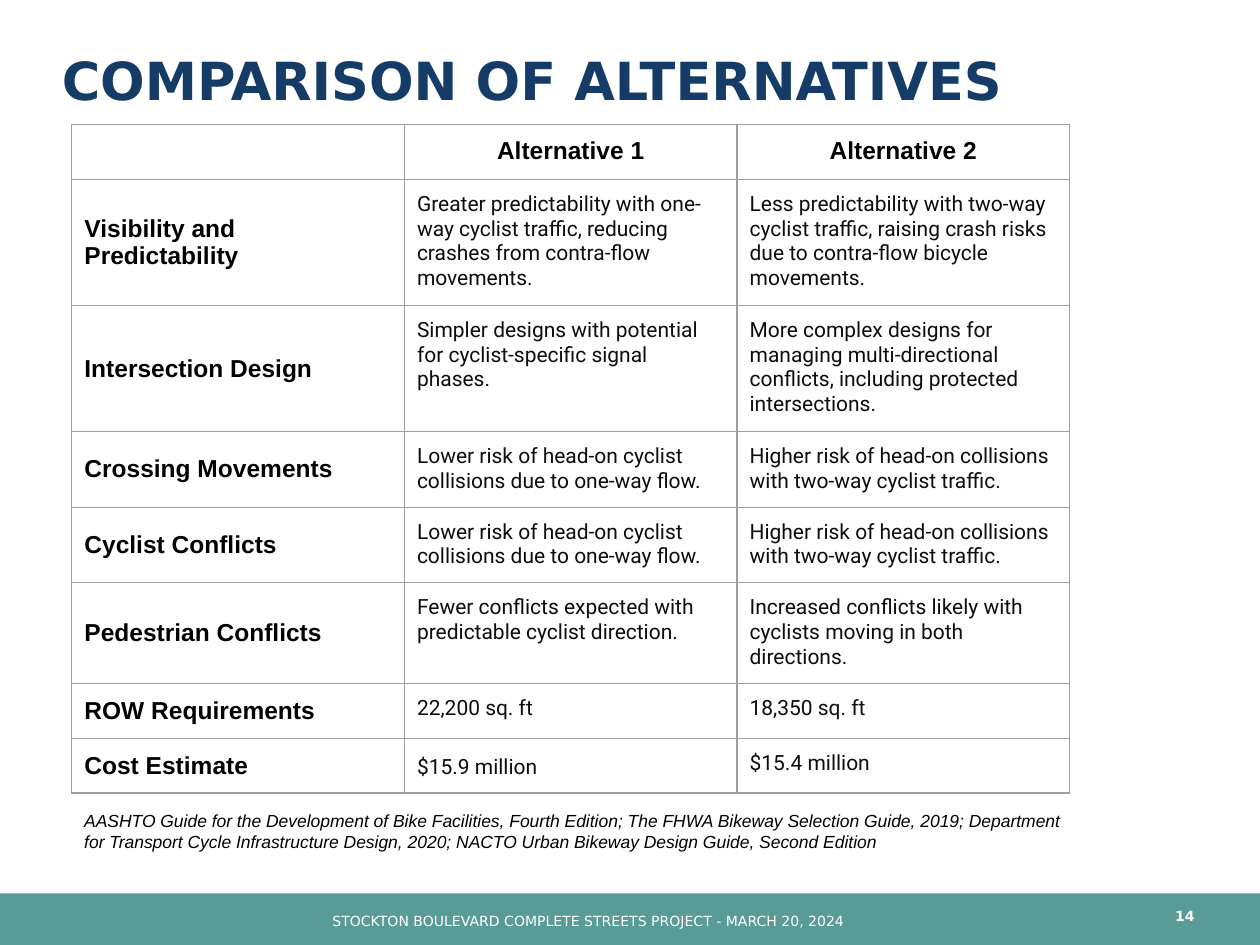
import pptx
import pptx.dml.color
import pptx.enum.shapes
import pptx.enum.text
import pptx.oxml
import pptx.oxml.ns
import pptx.util
from pptx.util import Inches

RGBColor = pptx.dml.color.RGBColor
ALIGN = pptx.enum.text.PP_ALIGN
ANCHOR = pptx.enum.text.MSO_ANCHOR

NAVY = RGBColor(0x14, 0x3C, 0x66)
TEAL = RGBColor(0x30, 0x83, 0x7E)
WHITE = RGBColor(0xFF, 0xFF, 0xFF)
BLACK = RGBColor(0x00, 0x00, 0x00)
INK = RGBColor(0x0D, 0x0D, 0x0D)
BORDER_GRAY = RGBColor(0x9E, 0x9E, 0x9E)

HEADINGS = ["", "Alternative 1", "Alternative 2"]
HEAD_ON_RISKS = [
    "Lower risk of head-on cyclist collisions due to one-way flow.",
    "Higher risk of head-on collisions with two-way cyclist traffic.",
]
CRITERIA = [
    ["Visibility and Predictability",
     "Greater predictability with one-way cyclist traffic, reducing crashes from contra-flow movements.",
     "Less predictability with two-way cyclist traffic, raising crash risks due to contra-flow bicycle movements."],
    ["Intersection Design",
     "Simpler designs with potential for cyclist-specific signal phases.",
     "More complex designs for managing multi-directional conflicts, including protected intersections."],
    ["Crossing Movements", *HEAD_ON_RISKS],
    ["Cyclist Conflicts", *HEAD_ON_RISKS],
    ["Pedestrian Conflicts",
     "Fewer conflicts expected with predictable cyclist direction.",
     "Increased conflicts likely with cyclists moving in both directions."],
    ["ROW Requirements", "22,200 sq. ft", "18,350 sq. ft"],
    ["Cost Estimate", "$15.9 million", "$15.4 million"],
]
SOURCES = (
    "AASHTO Guide for the Development of Bike Facilities, Fourth Edition; "
    "The FHWA Bikeway Selection Guide, 2019; Department for Transport Cycle "
    "Infrastructure Design, 2020; NACTO Urban Bikeway Design Guide, Second Edition"
)


def write_text(text_frame, text, font_name, size, color, bold=False, italic=False,
               align=ALIGN.LEFT, line_spacing=None):
    paragraph = text_frame.paragraphs[0]
    paragraph.alignment = align
    paragraph.line_spacing = line_spacing
    run = paragraph.add_run()
    run.text = text
    run.font.name = font_name
    run.font.size = pptx.util.Pt(size)
    run.font.color.rgb = color
    run.font.bold = bold
    run.font.italic = italic


def place(shape, left, top, width, height):
    shape.left, shape.top = Inches(left), Inches(top)
    shape.width, shape.height = Inches(width), Inches(height)


def add_title(slide, text):
    title = slide.shapes.title
    place(title, 0.39, 0.39, 9.23, 0.85)
    title.text_frame.vertical_anchor = ANCHOR.TOP
    title.text_frame.auto_size = pptx.enum.text.MSO_AUTO_SIZE.NONE
    write_text(title.text_frame, text, "DejaVu Sans", 30, NAVY, bold=True, line_spacing=0.9)


def add_footer_band(slide):
    band = slide.shapes.add_shape(pptx.enum.shapes.MSO_SHAPE.RECTANGLE,
                                  Inches(0), Inches(7.09), Inches(10), Inches(0.41))
    band.shadow.inherit = False
    band.fill.solid()
    band.fill.fore_color.rgb = TEAL
    band.line.fill.background()
    color = band.fill._xPr.find(".//" + pptx.oxml.ns.qn("a:srgbClr"))
    color.append(pptx.oxml.parse_xml(
        f'<a:alpha {pptx.oxml.ns.nsdecls("a")} val="80000"/>'))


def add_text_box(slide, box, text, font_name, size, color, anchor=ANCHOR.MIDDLE,
                 vertical_margin=0.05, **formatting):
    text_frame = slide.shapes.add_textbox(*map(Inches, box)).text_frame
    text_frame.word_wrap = True
    text_frame.vertical_anchor = anchor
    text_frame.margin_top = text_frame.margin_bottom = Inches(vertical_margin)
    write_text(text_frame, text, font_name, size, color, **formatting)


def set_borders(cell):
    properties = cell._tc.get_or_add_tcPr()
    for position, side in enumerate(("lnL", "lnR", "lnT", "lnB")):
        properties.insert(position, pptx.oxml.parse_xml(
            f'<a:{side} {pptx.oxml.ns.nsdecls("a")} w="{pptx.util.Pt(0.75)}"><a:solidFill>'
            f'<a:srgbClr val="{BORDER_GRAY}"/></a:solidFill></a:{side}>'))


def set_empty_cell_size(cell, size):
    cell.text_frame.paragraphs[0]._p.append(pptx.oxml.parse_xml(
        f'<a:endParaRPr {pptx.oxml.ns.nsdecls("a")} sz="{size * 100}"/>'))


def fill_cell(cell, text, row_index, column_index):
    cell.fill.background()
    set_borders(cell)
    cell.margin_left = cell.margin_right = Inches(0.1)
    cell.margin_top = cell.margin_bottom = Inches(0.1)
    if not text:
        set_empty_cell_size(cell, 14)
    elif row_index == 0:
        write_text(cell.text_frame, text, "Arial", 14, BLACK, bold=True, align=ALIGN.CENTER)
    elif column_index == 0:
        cell.vertical_anchor = ANCHOR.MIDDLE
        write_text(cell.text_frame, text, "Arial", 14, BLACK, bold=True)
    else:
        write_text(cell.text_frame, text, "Roboto", 12, INK)


def add_comparison_table(slide):
    rows = [HEADINGS, *CRITERIA]
    row_height = Inches(0.42)
    table = slide.shapes.add_table(len(rows), len(HEADINGS), Inches(0.57), Inches(0.99),
                                   Inches(7.92), row_height * len(rows)).table
    table.first_row = False
    table.horz_banding = False
    for row_index, texts in enumerate(rows):
        for column_index, text in enumerate(texts):
            fill_cell(table.cell(row_index, column_index), text, row_index, column_index)
    first_cost = table.cell(len(rows) - 1, 1).text_frame.paragraphs[0]
    first_cost.line_spacing = 1.15
    first_cost.space_after = pptx.util.Pt(10)


def main():
    presentation = pptx.Presentation()
    presentation.slide_width = Inches(10)
    presentation.slide_height = Inches(7.5)
    slide = presentation.slides.add_slide(presentation.slide_layouts[5])
    add_footer_band(slide)
    add_title(slide, "COMPARISON OF ALTERNATIVES")
    add_text_box(slide, (8.96, 7.1, 0.62, 0.36), "14", "DejaVu Sans", 8, WHITE,
                 bold=True, align=ALIGN.RIGHT, line_spacing=0.9)
    add_comparison_table(slide)
    add_text_box(slide, (0.57, 6.33, 7.98, 0.36), SOURCES, "Arial", 10, BLACK,
                 anchor=ANCHOR.TOP, vertical_margin=0.1, italic=True)
    add_text_box(slide, (2.54, 7.14, 6.27, 0.36),
                 "STOCKTON BOULEVARD COMPLETE STREETS PROJECT - MARCH 20, 2024",
                 "DejaVu Sans", 8, WHITE, line_spacing=0.9)
    presentation.save("out.pptx")


if __name__ == "__main__":
    main()
